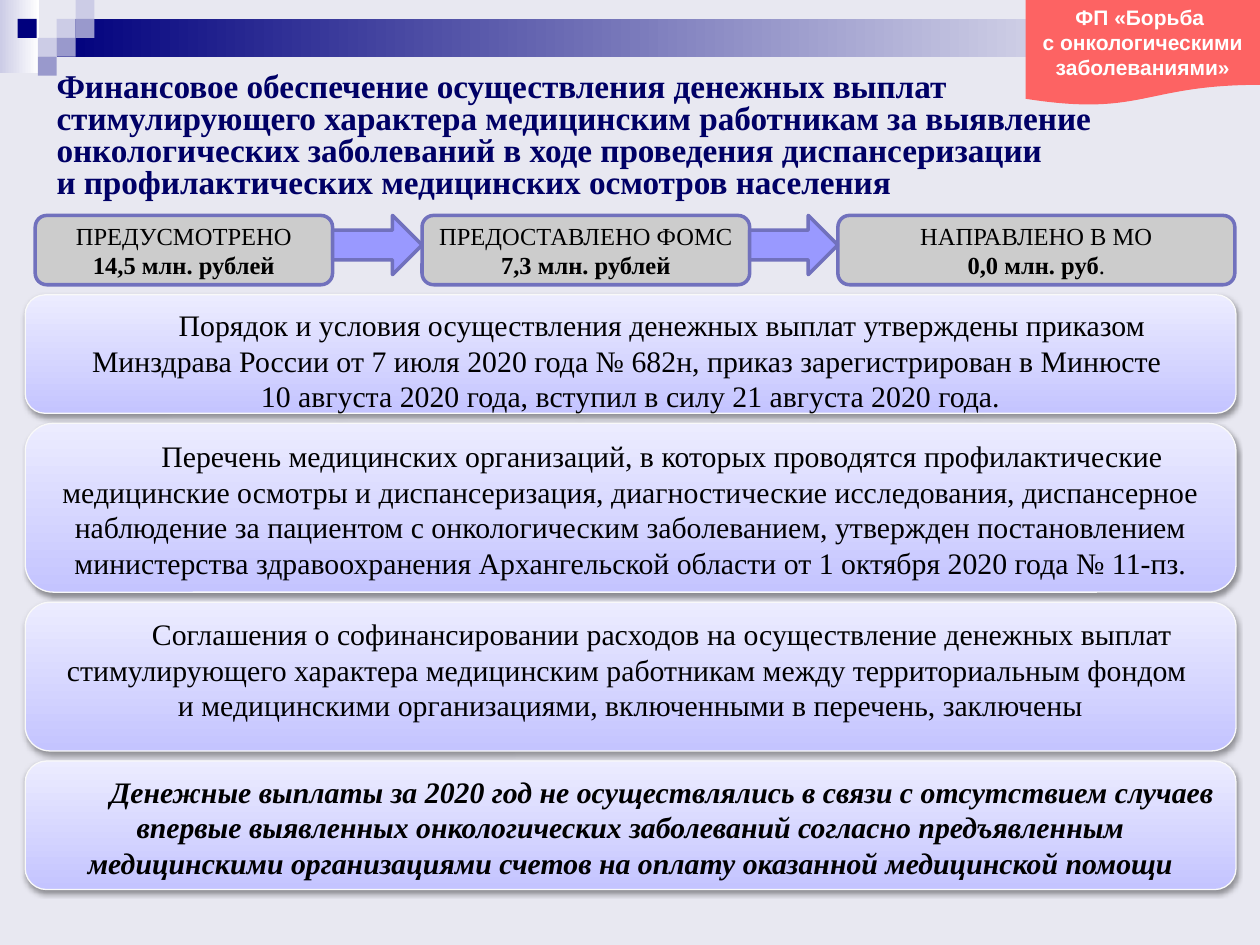
"""Build the slide on funding of incentive payments for detecting cancer."""
from lxml.etree import SubElement
from pptx import Presentation
from pptx.dml.color import RGBColor
from pptx.enum.shapes import MSO_SHAPE as SHAPE
from pptx.enum.text import MSO_ANCHOR as ANCHOR, PP_ALIGN as ALIGN
from pptx.oxml.ns import qn
from pptx.util import Inches, Pt

COLORS = {
    "bg": "E8E8F1", "navy": "00007D", "title": "000066", "pale": "CCCCE6",
    "mid": "9999CC", "white": "FFFFFF", "black": "000000", "gray": "CCCCCC",
    "outline": "7171BD", "arrow": "9999FF", "red": "FD6363",
    "panel_low": "C4C4FF", "panel_high": "ECECFF", "panel_line": "F9F9F9",
}
SERIF, SANS = "Times New Roman", "Arial"

TITLE = ("Финансовое обеспечение осуществления денежных выплат стимулирующего "
         "характера медицинским работникам за выявление онкологических заболеваний "
         "в ходе проведения диспансеризации \n"
         "и профилактических медицинских осмотров населения")
BADGE = "ФП «Борьба \nс онкологическими заболеваниями»"

BARS = [(0, 0, 0.31, 0.58, "pale"), (0.45, 0.15, 9.55, 0.3, "navy")]
SQUARE = 0.15
SQUARES = [(0.45, 0.15, "pale"), (0.6, 0, "pale"), (0.6, 0.15, "mid"),
           (0.3, 0.3, "pale"), (0.14, 0.15, "navy"), (0.45, 0.3, "mid"),
           (0.3, 0.45, "mid")]

STEP_TOP, STEP_HEIGHT, ARROW_HEIGHT = 1.71, 0.55, 0.47
STEPS = [
    (0.28, 2.36, "ПРЕДУСМОТРЕНО", "14,5 млн. рублей", ""),
    (3.35, 2.6, "ПРЕДОСТАВЛЕНО ФОМС", "7,3 млн. рублей", ""),
    (6.65, 3.15, "НАПРАВЛЕНО В МО", "0,0 млн. руб", "."),
]

PANEL_LEFT, PANEL_TOP, PANEL_WIDTH, PANEL_GAP = 0.2, 2.34, 9.61, 0.08
PANELS = [
    (0.94, False,
     "Порядок и условия осуществления денежных выплат утверждены приказом "
     "Минздрава России от 7 июля 2020 года № 682н, приказ зарегистрирован в Минюсте \n"
     "10 августа 2020 года, вступил в силу 21 августа 2020 года."),
    (1.34, False,
     "Перечень медицинских организаций, в которых проводятся профилактические "
     "медицинские осмотры и диспансеризация, диагностические исследования, "
     "диспансерное наблюдение за пациентом с онкологическим заболеванием, утвержден "
     "постановлением министерства здравоохранения Архангельской области "
     "от 1 октября 2020 года № 11-пз."),
    (1.18, False,
     "Соглашения о софинансировании расходов на осуществление денежных выплат "
     "стимулирующего характера медицинским работникам между территориальным фондом \n"
     "и медицинскими организациями, включенными в перечень, заключены"),
    (1.02, True,
     "Денежные выплаты за 2020 год не осуществлялись в связи с отсутствием случаев "
     "впервые выявленных онкологических заболеваний согласно предъявленным "
     "медицинскими организациями счетов на оплату оказанной медицинской помощи"),
]


def rgb(name):
    return RGBColor.from_string(COLORS[name])


def add_shape(slide, kind, box, fill, line=None, width=2):
    sp = slide.shapes.add_shape(kind, *map(Inches, box))
    sp.shadow.inherit = False
    if isinstance(fill, str):
        sp.fill.solid()
        sp.fill.fore_color.rgb = rgb(fill)
    else:
        start, end, angle = fill
        sp.fill.gradient()
        sp.fill.gradient_angle = angle
        for stop, name in zip(sp.fill.gradient_stops, (start, end)):
            stop.color.rgb = rgb(name)
    if line:
        sp.line.color.rgb = rgb(line)
        sp.line.width = Pt(width)
    else:
        sp.line.fill.background()
    return sp


def style(p, size, color="black", font=SERIF, bold=False, italic=False, align=ALIGN.CENTER):
    p.alignment = align
    for r in p.runs:
        r.font.size, r.font.name = Pt(size), font
        r.font.bold, r.font.italic = bold, italic
        r.font.color.rgb = rgb(color)


def add_shadow(sp):
    effects = sp._element.spPr.find(qn("a:effectLst"))
    shadow = SubElement(effects, qn("a:outerShdw"), blurRad=str(Pt(3.1)),
                        dist=str(Pt(1.6)), dir="5400000", rotWithShape="0")
    color = SubElement(shadow, qn("a:srgbClr"), val=COLORS["black"])
    SubElement(color, qn("a:alpha"), val="38000")


def add_header(slide):
    for *box, color in BARS:
        add_shape(slide, SHAPE.RECTANGLE, box, (color, "white", 0))
    for left, top, color in SQUARES:
        add_shape(slide, SHAPE.RECTANGLE, (left, top, SQUARE, SQUARE), color)
    title = slide.shapes.add_textbox(*map(Inches, (0.35, 0.53, 9.29, 1.1)))
    tf = title.text_frame
    tf.word_wrap = True
    p = tf.paragraphs[0]
    p.text = TITLE
    p.line_spacing = 0.8
    style(p, 19, "title", bold=True, align=ALIGN.LEFT)
    badge = add_shape(slide, SHAPE.FLOWCHART_DOCUMENT, (8.14, 0, 1.86, 0.84), "red")
    p = badge.text_frame.paragraphs[0]
    p.text = BADGE
    style(p, 12, "white", SANS, bold=True)


def add_steps(slide):
    for left, width, label, amount, ending in STEPS:
        sp = add_shape(slide, SHAPE.FLOWCHART_ALTERNATE_PROCESS,
                       (left, STEP_TOP, width, STEP_HEIGHT), "gray", "outline")
        tf = sp.text_frame
        tf.text = f"{label}\n{amount}"
        heading, value = tf.paragraphs
        if ending:
            value.add_run().text = ending
        style(heading, 14)
        style(value, 14)
        value.runs[0].font.bold = True
    for (left, width, *_), (following, *_) in zip(STEPS, STEPS[1:]):
        start = left + width
        add_shape(slide, SHAPE.RIGHT_ARROW,
                  (start, STEP_TOP, following - start, ARROW_HEIGHT), "arrow", "outline")


def add_panels(slide):
    top = PANEL_TOP
    for height, emphasis, text in PANELS:
        sp = add_shape(slide, SHAPE.ROUNDED_RECTANGLE,
                       (PANEL_LEFT, top, PANEL_WIDTH, height),
                       ("panel_low", "panel_high", 90), "panel_line", 0.75)
        add_shadow(sp)
        tf = sp.text_frame
        tf.vertical_anchor = ANCHOR.TOP
        p = tf.paragraphs[0]
        p.text = text
        p._p.get_or_add_pPr().set("indent", str(Inches(0.5)))
        style(p, 17, bold=emphasis, italic=emphasis)
        top += height + PANEL_GAP


def main():
    prs = Presentation()
    prs.slide_width, prs.slide_height = Inches(10), Inches(7.5)
    slide = prs.slides.add_slide(prs.slide_layouts[6])
    slide.background.fill.solid()
    slide.background.fill.fore_color.rgb = rgb("bg")
    add_header(slide)
    add_steps(slide)
    add_panels(slide)
    prs.save("out.pptx")


if __name__ == "__main__":
    main()
